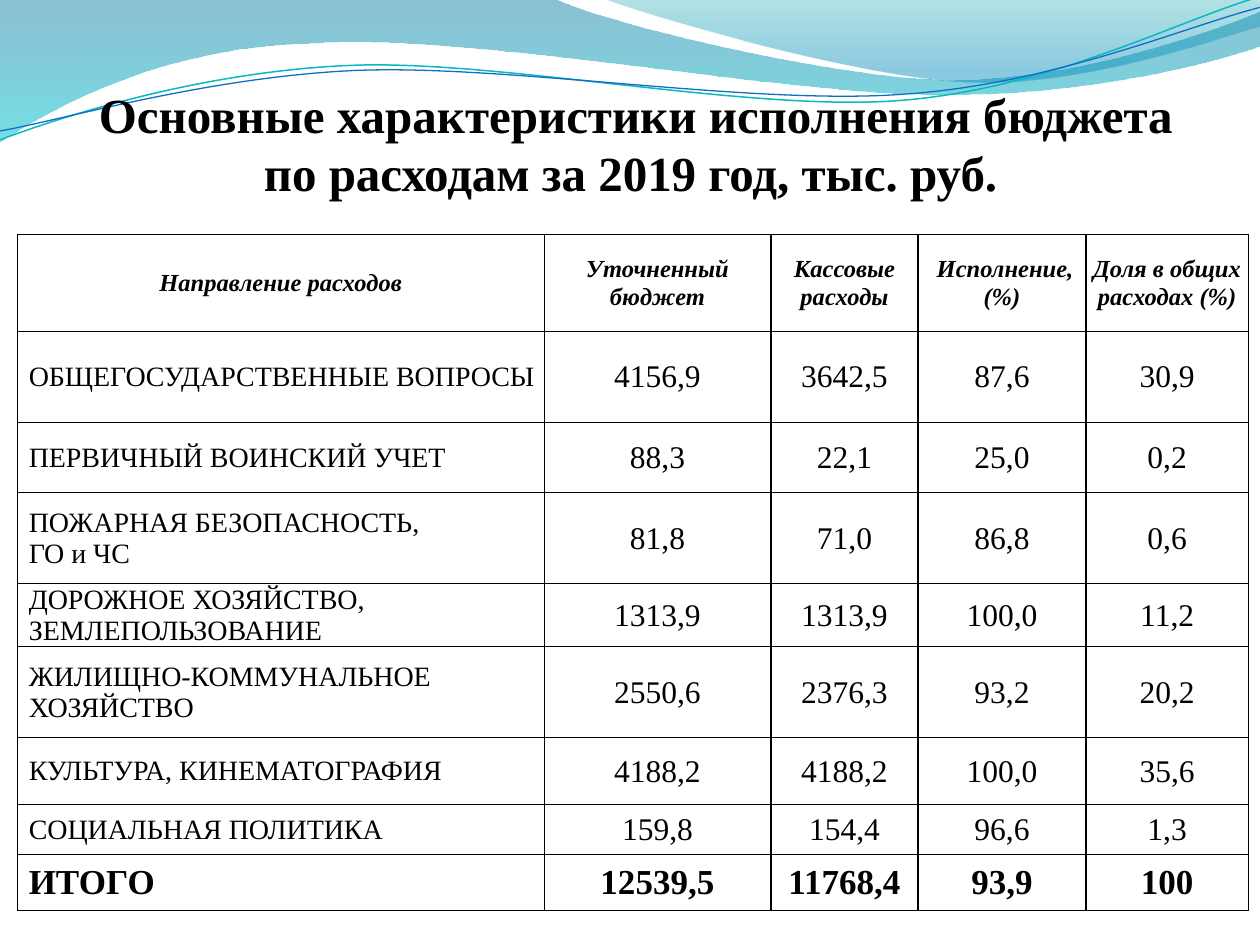
import pptx
import pptx.dml.color
import pptx.enum.text
import pptx.oxml
import pptx.oxml.ns
import pptx.util

Cm = pptx.util.Cm
Pt = pptx.util.Pt
RGBColor = pptx.dml.color.RGBColor
ALIGN = pptx.enum.text.PP_ALIGN
MIDDLE = pptx.enum.text.MSO_ANCHOR.MIDDLE
qn = pptx.oxml.ns.qn

BLACK = RGBColor(0x00, 0x00, 0x00)
BLUE = RGBColor(0x00, 0x74, 0xA1)
CYAN = RGBColor(0x00, 0xC6, 0xCF)
TEAL = RGBColor(0x00, 0xA1, 0xA9)
SKY = RGBColor(0x00, 0x8B, 0xBF)
LINE_TEAL = RGBColor(0x0A, 0xB8, 0xBF)
LINE_BLUE = RGBColor(0x0F, 0x6F, 0xC6)
FONT = "Times New Roman"

# Outlines in cm: a start, then segments of one point (line) or three (Bezier curve)
WAVES = [
    ((0, 0), [
        [(11.18, -0.03)],
        [(12.09, 0.43), (16.87, 1.6), (19.25, 1.6)],
        [(21.67, 1.6), (24.33, 0.66), (25.4, 0.23)],
        [(25.43, 0.91)],
        [(24.97, 1.12), (22.1, 1.93), (18.95, 1.91)],
        [(15.8, 1.91), (9.7, 0.71), (6.53, 0.86)],
        [(3.28, 0.91), (1.17, 2.11), (-0.03, 2.87)],
        [(0, 0)],
    ], [(0, BLUE, 45), (1, CYAN, 55)]),
    ((12.17, -0.03), [
        [(12.93, 0.28), (17.32, 1.57), (19.53, 1.65)],
        [(21.74, 1.75), (24.41, 0.81), (25.4, 0.53)],
        [(25.4, 0)],
        [(12.17, -0.03)],
    ], [(0, TEAL, 30), (0.8, SKY, 45)]),
]
STROKES = [
    ((0, 2.82), [
        [(1.22, 2.36), (4.01, 1.45), (7.04, 1.32)],
        [(10.03, 1.19), (15.06, 2.26), (18.11, 2.03)],
        [(21.16, 1.8), (23.83, 0.38), (25.35, -0.05)],
    ], LINE_TEAL, 0.85),
    ((0, 2.64), [
        [(1.19, 2.44), (4.17, 1.55), (7.19, 1.42)],
        [(10.26, 1.3), (15.16, 2.13), (18.21, 1.9)],
        [(21.23, 1.7), (23.9, 0.53), (25.4, 0.15)],
    ], LINE_BLUE, 0.75),
]

COLUMN_WIDTHS = [10.62, 4.57, 2.97, 3.38, 3.28]
ROW_HEIGHTS = [1.96, 1.83, 1.42, 1.83, 1, 1.83, 1.35, 1, 1.14]
JUSTIFIED_ROWS = (1, 7)
ROWS = [
    ["Направление расходов", "Уточненный бюджет", "Кассовые расходы",
     " Исполнение, (%)", "Доля в общих расходах (%)"],
    ["ОБЩЕГОСУДАРСТВЕННЫЕ ВОПРОСЫ", "4156,9", "3642,5", "87,6", "30,9"],
    ["ПЕРВИЧНЫЙ ВОИНСКИЙ УЧЕТ", "88,3", "22,1", "25,0", "0,2"],
    ["ПОЖАРНАЯ БЕЗОПАСНОСТЬ,\nГО и ЧС", "81,8", "71,0", "86,8", "0,6"],
    ["ДОРОЖНОЕ ХОЗЯЙСТВО, ЗЕМЛЕПОЛЬЗОВАНИЕ", "1313,9", "1313,9", "100,0", "11,2"],
    ["ЖИЛИЩНО-КОММУНАЛЬНОЕ ХОЗЯЙСТВО", "2550,6", "2376,3", "93,2", "20,2"],
    ["КУЛЬТУРА, КИНЕМАТОГРАФИЯ", "4188,2", "4188,2", "100,0", "35,6"],
    ["СОЦИАЛЬНАЯ ПОЛИТИКА", "159,8", "154,4", "96,6", "1,3"],
    ["ИТОГО", "12539,5", "11768,4", "93,9", "100"],
]
HEADER_FORMAT = {"size": Pt(14), "bold": True, "italic": True}
NAME_FORMAT = {"size": Pt(16), "bold": False, "italic": False}
VALUE_FORMAT = {"size": Pt(18), "bold": False, "italic": False}
TOTAL_FORMAT = {"size": Pt(20), "bold": True, "italic": False}
CELL_FORMAT = {"margin_left": Cm(0.02), "margin_top": Cm(0.02),
               "margin_right": Cm(0.02), "margin_bottom": 0,
               "vertical_anchor": MIDDLE}


def set_attributes(target, values):
    for name, value in values.items():
        setattr(target, name, value)


def format_font(font, values):
    set_attributes(font, {"name": FONT, **values})
    font.color.rgb = BLACK


def add_outline(slide, left, top, start, segments, close):
    points = [(Cm(left + x), Cm(top + y))
              for x, y in [start, *(point for segment in segments for point in segment)]]
    builder = slide.shapes.build_freeform(*points[0])
    builder.add_line_segments(points[1:], close=close)
    shape = builder.convert_to_shape()
    shape.shadow.inherit = False
    # Join each three points of a curve segment into one Bezier curve
    lines = iter(list(shape.element.spPr.iter(qn("a:lnTo"))))
    for segment in segments:
        parts = [next(lines) for point in segment]
        if len(parts) == 3:
            curve = parts[0].makeelement(qn("a:cubicBezTo"), {})
            parts[0].addprevious(curve)
            for part in parts:
                curve.append(part[0])
                part.getparent().remove(part)
    return shape


def add_waves(slide, left, top):
    # Translucent gradient bands
    for start, segments, stops in WAVES:
        shape = add_outline(slide, left, top, start, segments, True)
        shape.line.fill.background()
        shape.fill.gradient()
        shape.fill.gradient_angle = 270
        for stop, (position, color, opacity) in zip(shape.fill.gradient_stops, stops):
            stop.position = position
            stop.color.rgb = color
        colors = list(shape.element.spPr.iter(qn("a:srgbClr")))
        for element, (position, color, opacity) in zip(colors, stops):
            element.append(element.makeelement(qn("a:alpha"), {"val": str(opacity * 1000)}))
    # Thin curves
    for start, segments, color, width in STROKES:
        shape = add_outline(slide, left, top, start, segments, False)
        shape.fill.background()
        shape.line.color.rgb = color
        shape.line.width = Pt(width)


def add_title(slide, left, top, width, height):
    box = slide.shapes.add_textbox(Cm(left), Cm(top), Cm(width), Cm(height))
    box.text_frame.word_wrap = True
    paragraph = box.text_frame.paragraphs[0]
    paragraph.alignment = ALIGN.CENTER
    title_format = {"size": Pt(28), "bold": True, "italic": False}
    pieces = [(" ", {"size": Pt(24), "bold": True, "italic": True}),
              ("Основные характеристики исполнения бюджета ", title_format),
              ("по расходам за 2019 год, тыс. руб. ", title_format)]
    for index, (text, values) in enumerate(pieces):
        if index == 2:
            paragraph.add_line_break()
        run = paragraph.add_run()
        run.text = text
        format_font(run.font, values)


def set_borders(cell, widths):
    properties = cell._tc.get_or_add_tcPr()
    for index, (side, width) in enumerate(zip("LRTB", widths)):
        properties.insert(index, pptx.oxml.parse_xml(
            f'<a:ln{side} {pptx.oxml.ns.nsdecls("a")} w="{Pt(width)}">'
            f'<a:solidFill><a:srgbClr val="{BLACK}"/></a:solidFill></a:ln{side}>'))


def add_budget_table(slide, left, top, width, height):
    last_row, last_column = len(ROWS) - 1, len(COLUMN_WIDTHS) - 1
    frame = slide.shapes.add_table(len(ROWS), len(COLUMN_WIDTHS), Cm(left), Cm(top),
                                   Cm(width), Cm(height))
    table = frame.table
    set_attributes(table, {"first_row": False, "horz_banding": False})
    for column, column_width in zip(table.columns, COLUMN_WIDTHS):
        column.width = Cm(column_width)
    for row, row_height in zip(table.rows, ROW_HEIGHTS):
        row.height = Cm(row_height)

    for r, texts in enumerate(ROWS):
        for c, text in enumerate(texts):
            cell = table.cell(r, c)
            is_name = c == 0 and r > 0
            cell.text = text
            set_attributes(cell, CELL_FORMAT)
            cell.fill.background()
            # Inner value columns and the fourth row's lower edge are heavier
            set_borders(cell, [1 if c > 1 else 0.5,
                               1 if 0 < c < last_column else 0.5,
                               1 if r == 4 else 0.5,
                               1 if r == 3 else 0.5])
            values = (HEADER_FORMAT if r == 0 else TOTAL_FORMAT if r == last_row
                      else NAME_FORMAT if is_name else VALUE_FORMAT)
            alignment = (ALIGN.CENTER if not is_name
                         else ALIGN.JUSTIFY if r in JUSTIFIED_ROWS else ALIGN.LEFT)
            for paragraph in cell.text_frame.paragraphs:
                paragraph.alignment = alignment
                if is_name:
                    paragraph._p.get_or_add_pPr().set("marL", str(Cm(0.21)))
                for run in paragraph.runs:
                    format_font(run.font, values)


def main():
    presentation = pptx.Presentation()
    presentation.slide_width, presentation.slide_height = Cm(25.4), Cm(19.05)
    slide = presentation.slides.add_slide(presentation.slide_layouts[6])
    add_waves(slide, 0, 0)
    add_budget_table(slide, 0.35, 4.72, 24.8, 13.74)
    add_title(slide, 1.19, 1.57, 23.29, 2.59)
    presentation.save("out.pptx")


if __name__ == "__main__":
    main()
